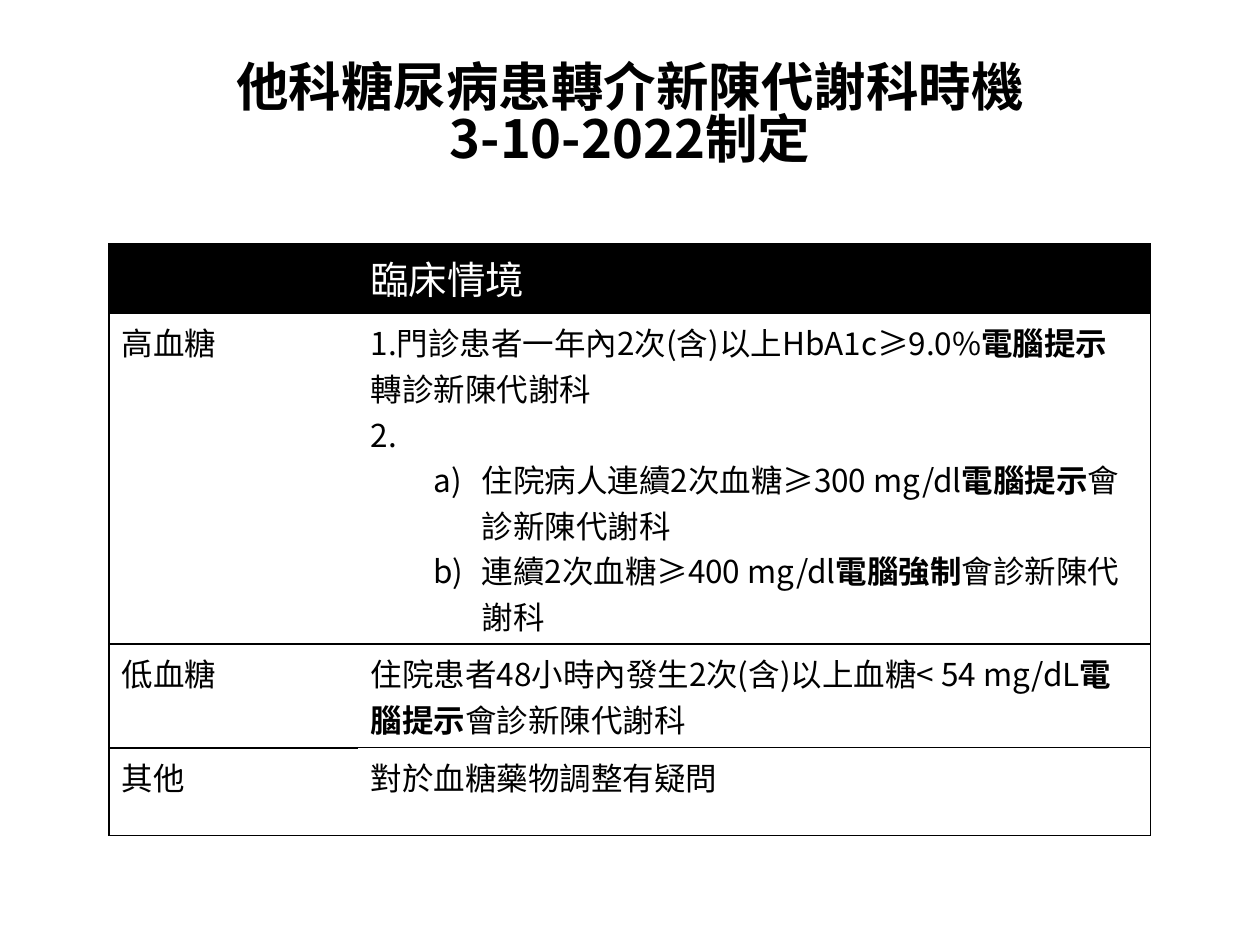
import pptx
import pptx.util
import pptx.dml.color
import pptx.enum.text
import pptx.oxml.ns
from lxml import etree

PX = 914400 // 126
FONT = "Noto Sans CJK SC"
INK = {"black": "000000", "white": "FFFFFF"}
qn = pptx.oxml.ns.qn
Pt = pptx.util.Pt


def write(frame, text, size=18, color="black", bold=False, align=None, space=None):
    for i, line in enumerate(text.split("\n")):
        para = frame.paragraphs[0] if i == 0 else frame.add_paragraph()
        para.alignment = align
        para.line_spacing = space
        if line.startswith("- "):
            line = line[2:]
            para.level = 1
            prop = para._p.get_or_add_pPr()
            prop.set("marL", str(111 * PX))
            prop.set("indent", str(-48 * PX))
            etree.SubElement(prop, qn("a:buAutoNum"), type="alphaLcParenR")
        for j, part in enumerate(line.split("*")):
            for k, piece in enumerate(part.split("\v")):
                if k:
                    para.add_line_break()
                if not piece:
                    continue
                run = para.add_run()
                run.text = piece
                font = run.font
                font.size = Pt(size)
                font.bold = bold or j % 2 == 1
                font.color.rgb = pptx.dml.color.RGBColor.from_string(INK[color])
                font.name = FONT
                etree.SubElement(run._r.get_or_add_rPr(), qn("a:ea"), typeface=FONT)


def border(cell, side, width):
    line = etree.SubElement(cell._tc.get_or_add_tcPr(), qn("a:ln" + side))
    if not width:
        etree.SubElement(line, qn("a:noFill"))
        return
    line.set("w", str(Pt(width)))
    fill = etree.SubElement(line, qn("a:solidFill"))
    etree.SubElement(fill, qn("a:srgbClr"), val=INK["black"])


deck = pptx.Presentation()
deck.slide_width = 1260 * PX
deck.slide_height = 945 * PX
slide = deck.slides.add_slide(deck.slide_layouts[6])

title = slide.shapes.add_textbox(63 * PX, 38 * PX, 1134 * PX, 158 * PX).text_frame
title.word_wrap = True
title.vertical_anchor = pptx.enum.text.MSO_ANCHOR.MIDDLE
write(title, "他科糖尿病患轉介新陳代謝科時機\v3-10-2022制定", size=30, bold=True,
      align=pptx.enum.text.PP_ALIGN.CENTER, space=0.82)

rows = [
    ("", "臨床情境"),
    ("高血糖",
     "1.門診患者一年內2次(含)以上HbA1c≥9.0%*電腦提示*轉診新陳代謝科\n"
     "2.\n"
     "- 住院病人連續2次血糖≥300 mg/dl*電腦提示*會診新陳代謝科\n"
     "- 連續2次血糖≥400 mg/dl*電腦強制*會診新陳代謝科"),
    ("低血糖", "住院患者48小時內發生2次(含)以上血糖< 54 mg/dL*電腦提示*會診新陳代謝科"),
    ("其他", "對於血糖藥物調整有疑問"),
]
wide = [249, 793]
high = [69, 331, 104, 88]
table = slide.shapes.add_table(len(rows), len(wide), 109 * PX, 244 * PX,
                               sum(wide) * PX, sum(high) * PX).table
table.horz_banding = False
for col, size in zip(table.columns, wide):
    col.width = size * PX
for row, size in zip(table.rows, high):
    row.height = size * PX

rules = [[0.75, 0.75, 1, 1, 0.75], [0.75] * 5]
for r, texts in enumerate(rows):
    head = r == 0
    for c, text in enumerate(texts):
        cell = table.cell(r, c)
        border(cell, "L", 0.75 if c == 0 else 0)
        border(cell, "R", 0.75 if c == 1 else 0)
        border(cell, "T", rules[c][r])
        border(cell, "B", rules[c][r + 1])
        cell.fill.solid()
        cell.fill.fore_color.rgb = pptx.dml.color.RGBColor.from_string(
            INK["black" if head else "white"])
        write(cell.text_frame, text, size=22 if head else 18,
              color="white" if head else "black")

deck.save("out.pptx")
